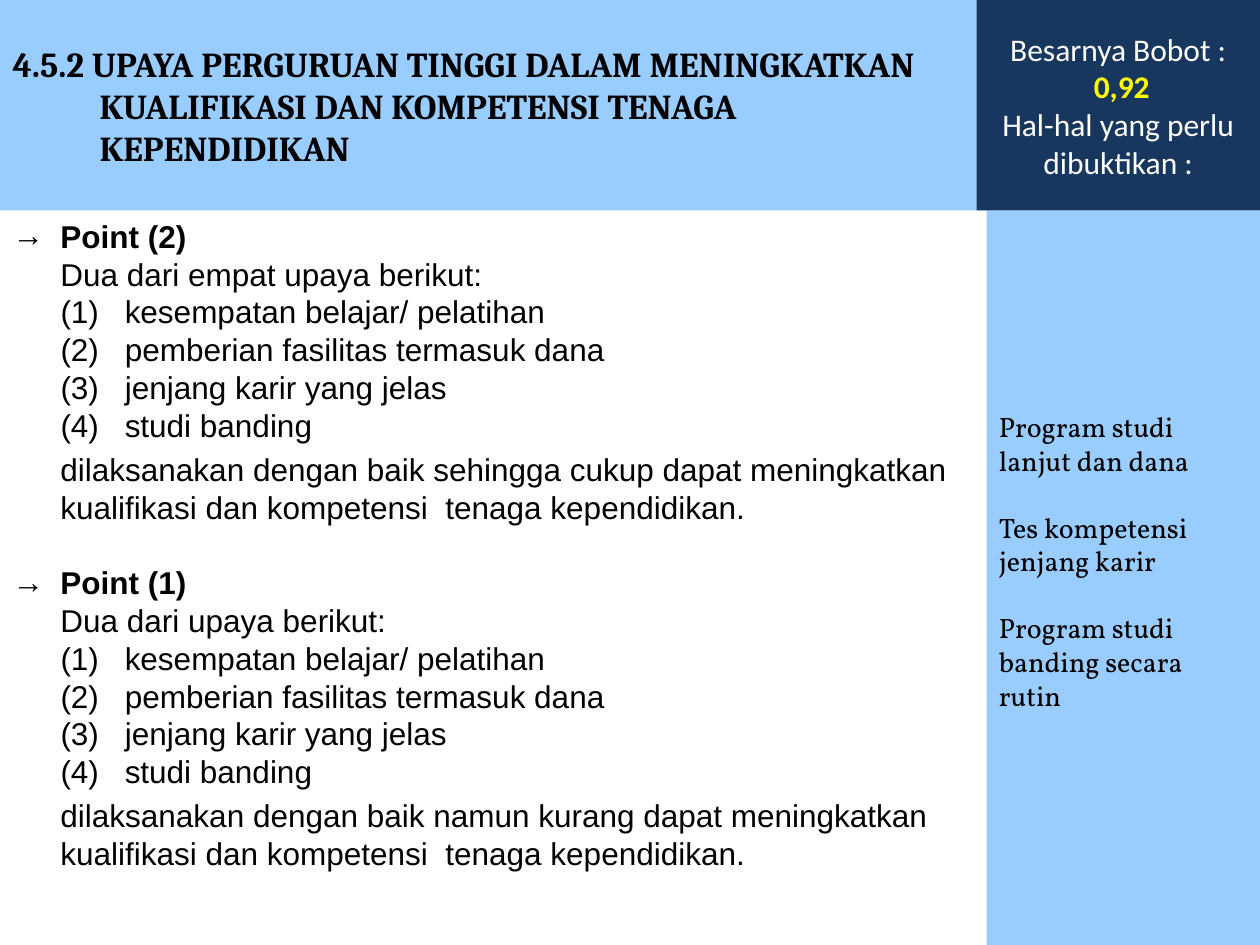
"""Build the slide on efforts to raise staff qualifications and competence."""
from lxml import etree
from pptx import Presentation, util as u
from pptx.dml.color import RGBColor
from pptx.enum import shapes, text
from pptx.oxml import ns

COLORS = {"sky": "99CCFF", "navy": "17375E", "black": "000000", "white": "FFFFFF", "yellow": "FFFF00"}
WIDTH, HEIGHT = 10, 7.5
HEADER = 1.67
MAIN = 7.83
WEIGHT_LEFT = 7.75

TITLE = "4.5.2 UPAYA PERGURUAN TINGGI DALAM MENINGKATKAN KUALIFIKASI DAN KOMPETENSI TENAGA KEPENDIDIKAN"
EFFORTS = ["kesempatan belajar/ pelatihan", "pemberian fasilitas termasuk dana",
           "jenjang karir yang jelas", "studi banding"]
POINTS = [
    ("Point (2)", "Dua dari empat upaya berikut:", "sehingga cukup"),
    ("Point (1)", "Dua dari upaya berikut:", "namun kurang"),
]
RESULT = "dilaksanakan dengan baik {} dapat meningkatkan kualifikasi dan kompetensi  tenaga kependidikan."
EVIDENCE = ["Program studi lanjut dan dana", "Tes kompetensi jenjang karir",
            "Program studi banding secara rutin"]
WEIGHT = [
    ("Besarnya Bobot :", {}),
    (" 0,92", {"color": "yellow", "bold": True}),
    ("Hal-hal yang perlu dibuktikan :", {}),
]


def place(shape, left, top, width, height):
    shape.left, shape.top, shape.width, shape.height = map(u.Inches, (left, top, width, height))
    frame = shape.text_frame
    frame.word_wrap = True
    frame.auto_size = text.MSO_AUTO_SIZE.NONE


def add_panel(slide, fill, *box):
    panel = slide.shapes.add_shape(shapes.MSO_SHAPE.RECTANGLE, 0, 0, 0, 0)
    place(panel, *box)
    paint(panel, fill)
    panel.line.fill.background()
    panel.shadow.inherit = False
    panel.text_frame.vertical_anchor = text.MSO_ANCHOR.MIDDLE
    return panel


def paint(shape, fill):
    shape.fill.solid()
    shape.fill.fore_color.rgb = RGBColor.from_string(COLORS[fill])


def write(shape, words, *, font, size, color="black", bold=False, align="LEFT",
          before=0, margin=0, hanging=0, bullet=None):
    frame = shape.text_frame
    paragraph = frame.add_paragraph() if frame.text else frame.paragraphs[0]
    paragraph.alignment = getattr(text.PP_ALIGN, align)
    paragraph.space_before = u.Pt(before)
    properties = paragraph._p.get_or_add_pPr()
    properties.set("marL", str(u.Inches(margin)))
    properties.set("indent", str(-u.Inches(hanging)))
    mark = etree.SubElement(properties, ns.qn("a:buChar" if bullet else "a:buNone"))
    if bullet:
        mark.set("char", bullet)
    run = paragraph.add_run()
    run.text = words
    run.font.name, run.font.size, run.font.bold = font, u.Pt(size), bold
    run.font.color.rgb = RGBColor.from_string(COLORS[color])


def write_points(body):
    style = {"font": "Arial", "size": 18}
    for index, (heading, intro, degree) in enumerate(POINTS):
        write(body, heading, bold=True, bullet="→", margin=0.38, hanging=0.38,
              before=21.6 if index else 0, **style)
        write(body, intro, margin=0.38, **style)
        for number, effort in enumerate(EFFORTS, 1):
            write(body, f"({number})\t{effort}", margin=0.89, hanging=0.51, **style)
        write(body, RESULT.format(degree), margin=0.38, before=3.6, **style)


def main():
    presentation = Presentation()
    presentation.slide_width, presentation.slide_height = u.Inches(WIDTH), u.Inches(HEIGHT)
    slide = presentation.slides.add_slide(presentation.slide_layouts[1])

    title, body = slide.placeholders
    place(title, 0, 0, MAIN, HEADER)
    paint(title, "sky")
    title.text_frame.vertical_anchor = text.MSO_ANCHOR.MIDDLE
    write(title, TITLE, font="Cambria", size=20, bold=True, margin=0.69, hanging=0.69)

    place(body, 0, HEADER, MAIN, HEIGHT - HEADER)
    write_points(body)

    evidence = add_panel(slide, "sky", MAIN, HEADER, WIDTH - MAIN, HEIGHT - HEADER)
    evidence.text_frame.margin_bottom = u.Inches(0.32)
    for index, proof in enumerate(EVIDENCE):
        write(evidence, proof, font="Vollkorn", size=16, before=19.2 if index else 0)

    weight = add_panel(slide, "navy", WEIGHT_LEFT, 0, WIDTH - WEIGHT_LEFT, HEADER)
    for words, accent in WEIGHT:
        write(weight, words, font="Calibri", size=18, align="CENTER", **{"color": "white", **accent})

    presentation.save("out.pptx")


if __name__ == "__main__":
    main()
